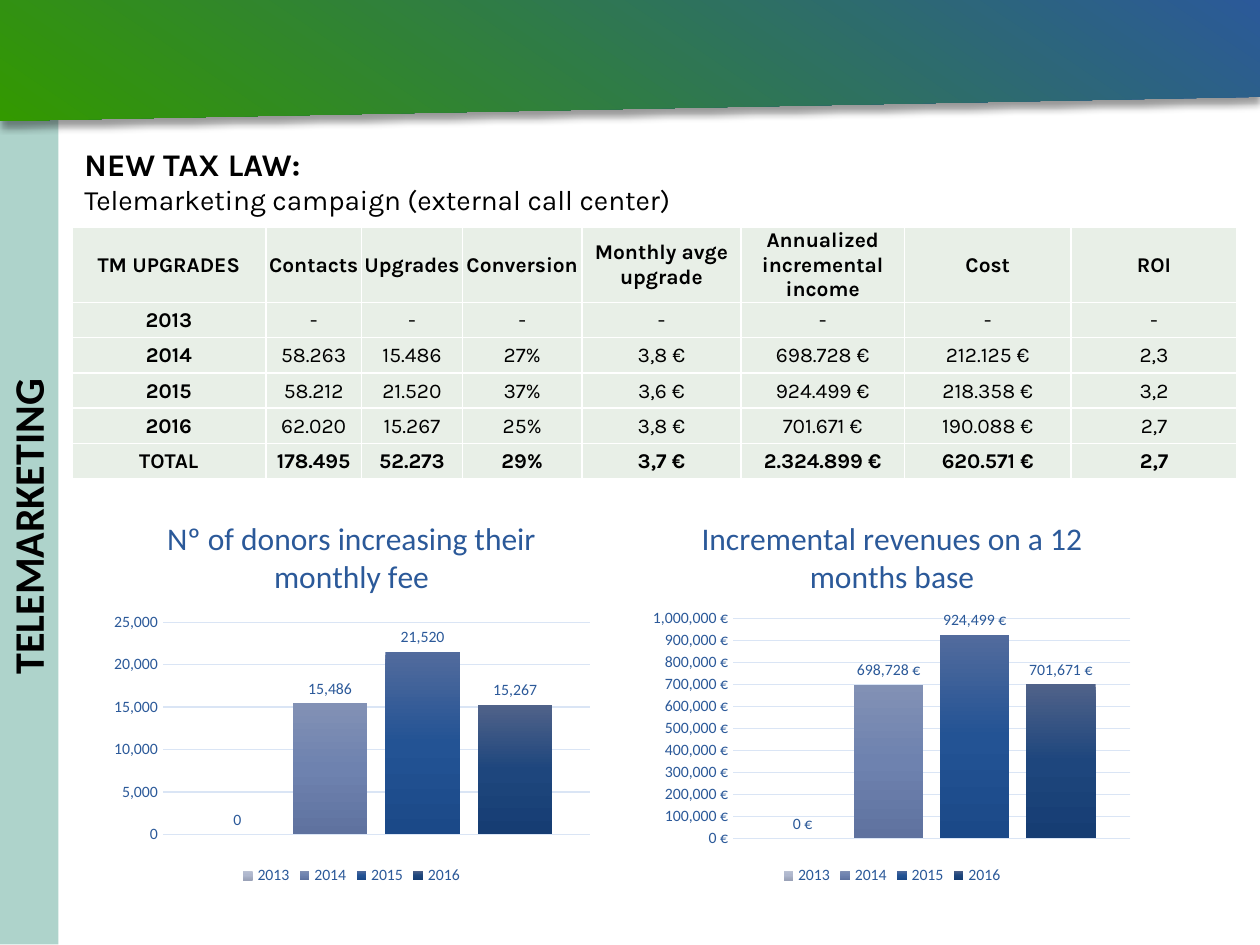
from dataclasses import dataclass
from typing import Any

import pptx
import pptx.chart.data
import pptx.dml.color
import pptx.enum.chart
import pptx.enum.shapes
import pptx.enum.text
import pptx.oxml
import pptx.oxml.ns
import pptx.util
from pptx.util import Inches

BLACK, WHITE, BLUE, GREEN = "000000", "FFFFFF", "2B5999", "339900"
MINT, PALE, GRID = "AED3CB", "E8EFE7", "DAE5F5"
NAMESPACE = pptx.oxml.ns.nsdecls("a", "c")
CENTER = pptx.enum.text.PP_ALIGN.CENTER
MIDDLE = pptx.enum.text.MSO_ANCHOR.MIDDLE

YEARS = {
    "2013": ("BAC1D3", "AFB7CD", "9AA2B8"),
    "2014": ("8291B5", "6E82AF", "5F729F"),
    "2015": ("526B9D", "235394", "1B4988"),
    "2016": ("506289", "1E467D", "163D73"),
}
COLUMN_WIDTHS = (1.54, 0.76, 0.8, 0.95, 1.26, 1.3, 1.32, 1.32)
HEADER_HEIGHT, ROW_HEIGHT = 0.6, 0.28
ROWS = (
    ("TM UPGRADES", "Contacts", "Upgrades", "Conversion", "Monthly avge upgrade",
     "Annualized incremental income", "Cost", "ROI"),
    ("2013",) + ("-",) * 7,
    ("2014", "58.263", "15.486", "27%", "3,8 €", "698.728 €", "212.125 €", "2,3"),
    ("2015", "58.212", "21.520", "37%", "3,6 €", "924.499 €", "218.358 €", "3,2"),
    ("2016", "62.020", "15.267", "25%", "3,8 €", "701.671 €", "190.088 €", "2,7"),
    ("TOTAL", "178.495", "52.273", "29%", "3,7 €", "2.324.899 €", "620.571 €", "2,7"),
)


@dataclass
class YearChart:
    title: str
    left: float
    values: tuple[int, ...]
    number_format: str
    maximum: int
    step: int
    plot: tuple[float, float, float, float]


CHARTS = (
    YearChart("Nº of donors increasing their monthly fee", 0.82,
              (0, 15486, 21520, 15267), "#,##0", 25000, 5000, (0.12, 0.32, 0.86, 0.54)),
    YearChart("Incremental revenues on a 12 months base", 5.11,
              (0, 698728, 924499, 701671), '#,##0\\ "€"', 1000000, 100000,
              (0.18, 0.31, 0.8, 0.56)),
)


def color(value: str) -> pptx.dml.color.RGBColor:
    return pptx.dml.color.RGBColor.from_string(value)


def apply(target: Any, values: dict[str, Any]) -> None:
    for name, value in values.items():
        setattr(target, name, value)


def style_font(font: Any, name: str, size: float, shade: str, bold: bool = False) -> None:
    apply(font, {"name": name, "size": pptx.util.Pt(size), "bold": bold})
    font.color.rgb = color(shade)


def fill_solid(fill: Any, shade: str) -> None:
    fill.solid()
    fill.fore_color.rgb = color(shade)


def fill_gradient(fill: Any, root: Any, shades: tuple[str, ...], angle: float) -> None:
    """Spread the shades evenly; the angle runs counter-clockwise."""
    fill.gradient()
    fill.gradient_angle = angle
    stops = root.find(".//" + pptx.oxml.ns.qn("a:gsLst"))
    for stop in list(stops):
        stops.remove(stop)
    for index, shade in enumerate(shades):
        position = 100000 * index // (len(shades) - 1)
        stops.append(pptx.oxml.parse_xml(
            f'<a:gs {NAMESPACE} pos="{position}"><a:srgbClr val="{shade}"/></a:gs>'))


def add_sidebar(page: Any) -> None:
    bar = page.shapes.add_shape(pptx.enum.shapes.MSO_SHAPE.RECTANGLE,
                                Inches(-3.1), Inches(3.93), Inches(6.63), Inches(0.5))
    bar.rotation = 270
    bar.shadow.inherit = False
    fill_solid(bar.fill, MINT)
    bar.line.fill.background()
    bar.text_frame.vertical_anchor = MIDDLE
    para = bar.text_frame.paragraphs[0]
    para.text, para.alignment = "TELEMARKETING", CENTER
    style_font(para.font, "Calibri", 24, BLACK, True)


def add_heading(page: Any) -> None:
    box = page.shapes.title
    apply(box, {"left": Inches(0.57), "top": Inches(1.1),
                "width": Inches(9.43), "height": Inches(0.67)})
    apply(box.text_frame, {"word_wrap": True,
                           "auto_size": pptx.enum.text.MSO_AUTO_SIZE.NONE,
                           "vertical_anchor": pptx.enum.text.MSO_ANCHOR.TOP})
    box.text_frame.text = "NEW TAX LAW:\nTelemarketing campaign (external call center)"
    for para, size, bold in zip(box.text_frame.paragraphs, (18, 16), (True, False)):
        para.alignment = pptx.enum.text.PP_ALIGN.LEFT
        style_font(para.font, "Karla", size, BLACK, bold)


def add_banner(page: Any) -> None:
    banner = page.shapes.add_shape(pptx.enum.shapes.MSO_SHAPE.FLOWCHART_MANUAL_INPUT,
                                   0, 0, Inches(10), Inches(0.96))
    banner.rotation = 180
    fill_gradient(banner.fill, banner._element, (BLUE, GREEN), 56)
    banner.line.fill.background()
    banner._element.spPr.append(pptx.oxml.parse_xml(
        f'<a:effectLst {NAMESPACE}><a:outerShdw blurRad="50800" dist="50800" dir="5400000" '
        'rotWithShape="0"><a:srgbClr val="000000"><a:alpha val="40000"/></a:srgbClr>'
        '</a:outerShdw></a:effectLst>'))


def add_year_chart(page: Any, chart_spec: YearChart) -> None:
    data = pptx.chart.data.CategoryChartData(number_format=chart_spec.number_format)
    data.categories = ["1"]
    for year, value in zip(YEARS, chart_spec.values):
        data.add_series(year, [value])
    chart = page.shapes.add_chart(
        pptx.enum.chart.XL_CHART_TYPE.COLUMN_CLUSTERED, Inches(chart_spec.left),
        Inches(3.94), Inches(3.94), Inches(3.12), data).chart
    style_font(chart.font, "Calibri", 10, BLACK)

    # Title and legend
    para = chart.chart_title.text_frame.paragraphs[0]
    span = para.add_run()
    span.text = chart_spec.title
    style_font(span.font, "Calibri", 18, BLUE)
    chart.chart_title.include_in_layout = False
    chart.has_legend = True
    apply(chart.legend, {"position": pptx.enum.chart.XL_LEGEND_POSITION.BOTTOM,
                         "include_in_layout": False})
    style_font(chart.legend.font, "Calibri", 9, BLUE)

    # Axes
    chart.category_axis.visible = False
    axis = chart.value_axis
    apply(axis, {"minimum_scale": 0, "maximum_scale": chart_spec.maximum,
                 "major_unit": chart_spec.step,
                 "major_tick_mark": pptx.enum.chart.XL_TICK_MARK.NONE})
    axis.format.line.fill.background()
    axis.major_gridlines.format.line.color.rgb = color(GRID)
    axis.major_gridlines.format.line.width = pptx.util.Pt(0.75)
    number_style = {"number_format": chart_spec.number_format,
                    "number_format_is_linked": False}
    apply(axis.tick_labels, number_style)
    style_font(axis.tick_labels.font, "Calibri", 9, BLUE)

    # Columns
    plot = chart.plots[0]
    apply(plot, {"gap_width": 100, "overlap": -24, "vary_by_categories": False})
    for series, shades in zip(plot.series, YEARS.values()):
        fill_gradient(series.format.fill, series._element, shades, 270)
        labels = series.data_labels
        apply(labels, number_style | {
            "show_value": True,
            "position": pptx.enum.chart.XL_LABEL_POSITION.OUTSIDE_END})
        style_font(labels.font, "Calibri", 9, BLUE)

    # Inner plot area
    area = chart._chartSpace.chart.plotArea
    for old in area.findall(pptx.oxml.ns.qn("c:layout")):
        area.remove(old)
    places = "".join(f'<c:{name} val="{value}"/>'
                     for name, value in zip("xywh", chart_spec.plot))
    area.insert(0, pptx.oxml.parse_xml(
        f'<c:layout {NAMESPACE}><c:manualLayout><c:layoutTarget val="inner"/>'
        f'<c:xMode val="edge"/><c:yMode val="edge"/>{places}</c:manualLayout></c:layout>'))


def add_results_table(page: Any) -> None:
    height = HEADER_HEIGHT + ROW_HEIGHT * (len(ROWS) - 1)
    table = page.shapes.add_table(len(ROWS), len(COLUMN_WIDTHS), Inches(0.57), Inches(1.8),
                                  Inches(sum(COLUMN_WIDTHS)), Inches(height)).table
    for column, width in zip(table.columns, COLUMN_WIDTHS):
        column.width = Inches(width)
    for index, texts in enumerate(ROWS):
        table.rows[index].height = Inches(ROW_HEIGHT if index else HEADER_HEIGHT)
        for place, text in enumerate(texts):
            cell = table.cell(index, place)
            apply(cell, {"text": text, "vertical_anchor": MIDDLE, "margin_bottom": 0,
                         "margin_left": Inches(0.01), "margin_right": Inches(0.01),
                         "margin_top": Inches(0.01)})
            fill_solid(cell.fill, PALE)
            para = cell.text_frame.paragraphs[0]
            para.alignment = CENTER
            style_font(para.font, "Karla", 12, BLACK,
                       place == 0 or index in (0, len(ROWS) - 1))
            for order, side in enumerate(("lnL", "lnR", "lnT", "lnB")):
                cell._tc.tcPr.insert(order, pptx.oxml.parse_xml(
                    f'<a:{side} {NAMESPACE} w="12700"><a:solidFill>'
                    f'<a:srgbClr val="{WHITE}"/></a:solidFill></a:{side}>'))


def main() -> None:
    deck = pptx.Presentation()
    deck.slide_width, deck.slide_height = Inches(10), Inches(7.5)
    page = deck.slides.add_slide(deck.slide_layouts[5])
    add_sidebar(page)
    add_heading(page)
    add_banner(page)
    for chart_spec in CHARTS:
        add_year_chart(page, chart_spec)
    add_results_table(page)
    deck.save("out.pptx")


if __name__ == "__main__":
    main()
